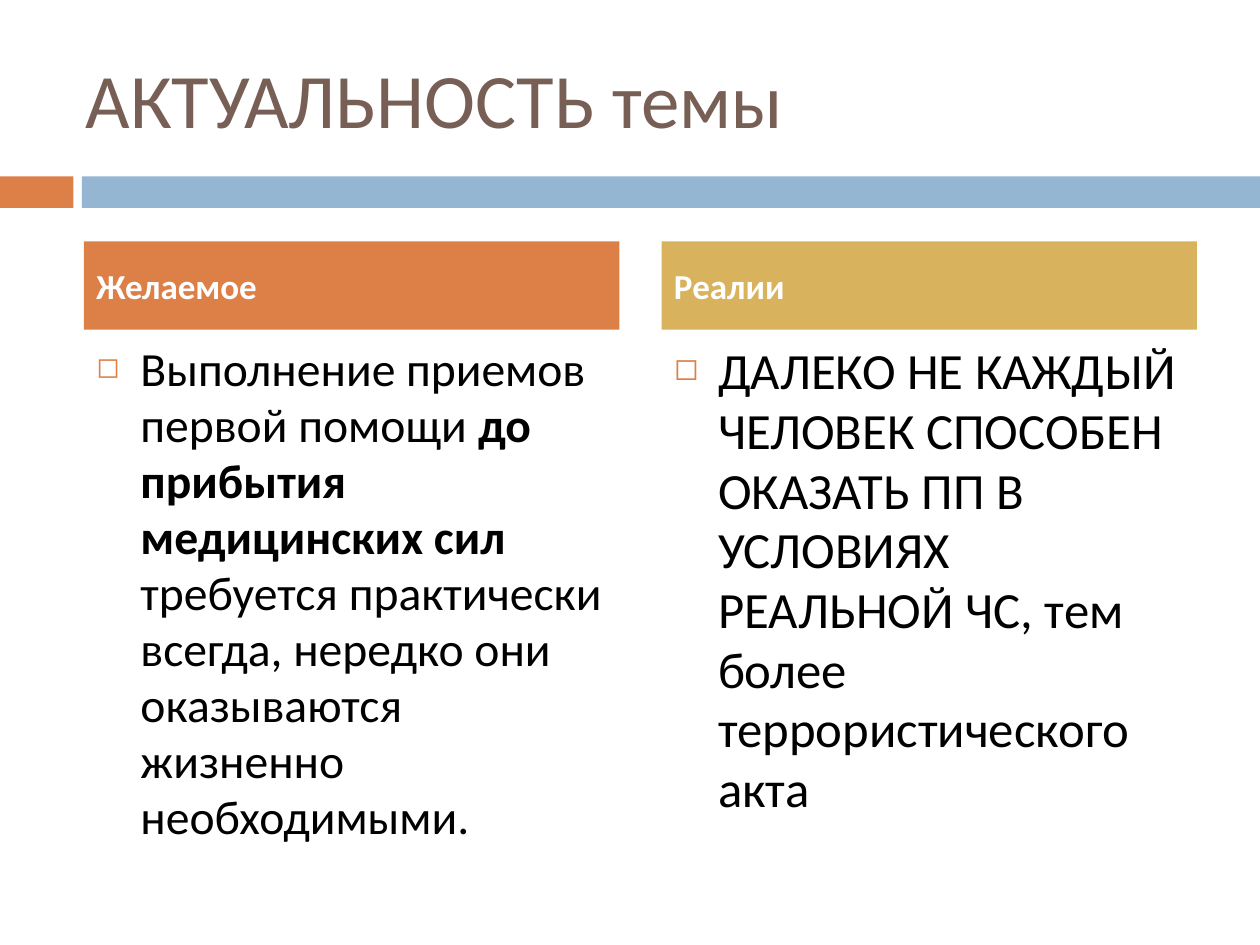
"""Build the slide that sets the desired state of first aid against reality."""
from dataclasses import dataclass

from lxml.etree import SubElement
from pptx import Presentation
from pptx.dml.color import RGBColor
from pptx.enum.shapes import MSO_SHAPE as Preset
from pptx.enum.text import MSO_ANCHOR as Anchor, PP_ALIGN as Align
from pptx.oxml.ns import qn
from pptx.util import Pt

ORANGE = RGBColor(0xDD, 0x80, 0x47)
BLUE = RGBColor(0x94, 0xB6, 0xD2)
GOLD = RGBColor(0xD8, 0xB2, 0x5C)
BROWN = RGBColor(0x77, 0x5F, 0x55)
BLACK = RGBColor(0, 0, 0)
WHITE = RGBColor(0xFF, 0xFF, 0xFF)
FONT = "Calibri"
COLUMN_WIDTH = 306
INDENT = 25.2


@dataclass(frozen=True)
class Box:
    left: float
    top: float
    width: float
    height: float

    def lengths(self) -> tuple:
        return Pt(self.left), Pt(self.top), Pt(self.width), Pt(self.height)


@dataclass(frozen=True)
class Phrase:
    text: str
    bold: bool = False


@dataclass(frozen=True)
class Column:
    left: float
    heading: str
    fill: RGBColor
    size: float
    phrases: tuple[Phrase, ...]


COLUMNS = (
    Column(48, "Желаемое", ORANGE, 27.2, (
        Phrase("Выполнение приемов первой помощи "),
        Phrase("до прибытия медицинских сил", True),
        Phrase(" требуется практически всегда, нередко они оказываются "
               "жизненно необходимыми."),
    )),
    Column(378, "Реалии", GOLD, 29, (
        Phrase("ДАЛЕКО НЕ КАЖДЫЙ ЧЕЛОВЕК СПОСОБЕН ОКАЗАТЬ ПП В УСЛОВИЯХ "
               "РЕАЛЬНОЙ ЧС, тем более террористического акта"),
    )),
)


def add_bar(slide, box: Box, fill: RGBColor):
    bar = slide.shapes.add_shape(Preset.RECTANGLE, *box.lengths())
    bar.shadow.inherit = False
    bar.fill.solid()
    bar.fill.fore_color.rgb = fill
    bar.line.fill.background()
    return bar


def write(holder, phrases: tuple[Phrase, ...], size: float, color: RGBColor,
          anchor: Anchor = Anchor.MIDDLE):
    frame = holder.text_frame
    frame.word_wrap = True
    frame.vertical_anchor = anchor
    paragraph = frame.paragraphs[0]
    paragraph.alignment = Align.LEFT
    for phrase in phrases:
        run = paragraph.add_run()
        run.text = phrase.text
        run.font.name = FONT
        run.font.size = Pt(size)
        run.font.bold = phrase.bold
        run.font.color.rgb = color
    return paragraph


def add_bullet(paragraph, color: RGBColor) -> None:
    properties = paragraph._p.get_or_add_pPr()
    properties.set("marL", str(Pt(INDENT)))
    properties.set("indent", str(-Pt(INDENT)))
    bullet_color = SubElement(properties, qn("a:buClr"))
    SubElement(bullet_color, qn("a:srgbClr"), val=str(color))
    SubElement(properties, qn("a:buSzPct"), val="60000")
    SubElement(properties, qn("a:buChar"), char="◻")


def add_column(slide, column: Column) -> None:
    body = slide.shapes.add_textbox(
        *Box(column.left, 192, COLUMN_WIDTH, 282).lengths())
    statement = write(body, column.phrases, column.size, BLACK, Anchor.TOP)
    statement.space_before = Pt(7)
    statement.line_spacing = 0.98
    add_bullet(statement, ORANGE)
    header = add_bar(slide, Box(column.left, 138, COLUMN_WIDTH, 50.4), column.fill)
    heading = write(header, (Phrase(column.heading, True),), 20, WHITE)
    heading.space_before = Pt(7)


def main() -> None:
    deck = Presentation()
    deck.slide_width, deck.slide_height = Pt(720), Pt(540)
    slide = deck.slides.add_slide(deck.slide_layouts[6])
    add_bar(slide, Box(0, 100.8, 42, 18), ORANGE)
    add_bar(slide, Box(46.8, 100.8, 673.2, 18), BLUE)
    title = slide.shapes.add_textbox(*Box(42, 21.6, 642, 68.4).lengths())
    write(title, (Phrase("АКТУАЛЬНОСТЬ темы"),), 44, BROWN)
    for column in COLUMNS:
        add_column(slide, column)
    deck.save("out.pptx")


if __name__ == "__main__":
    main()
